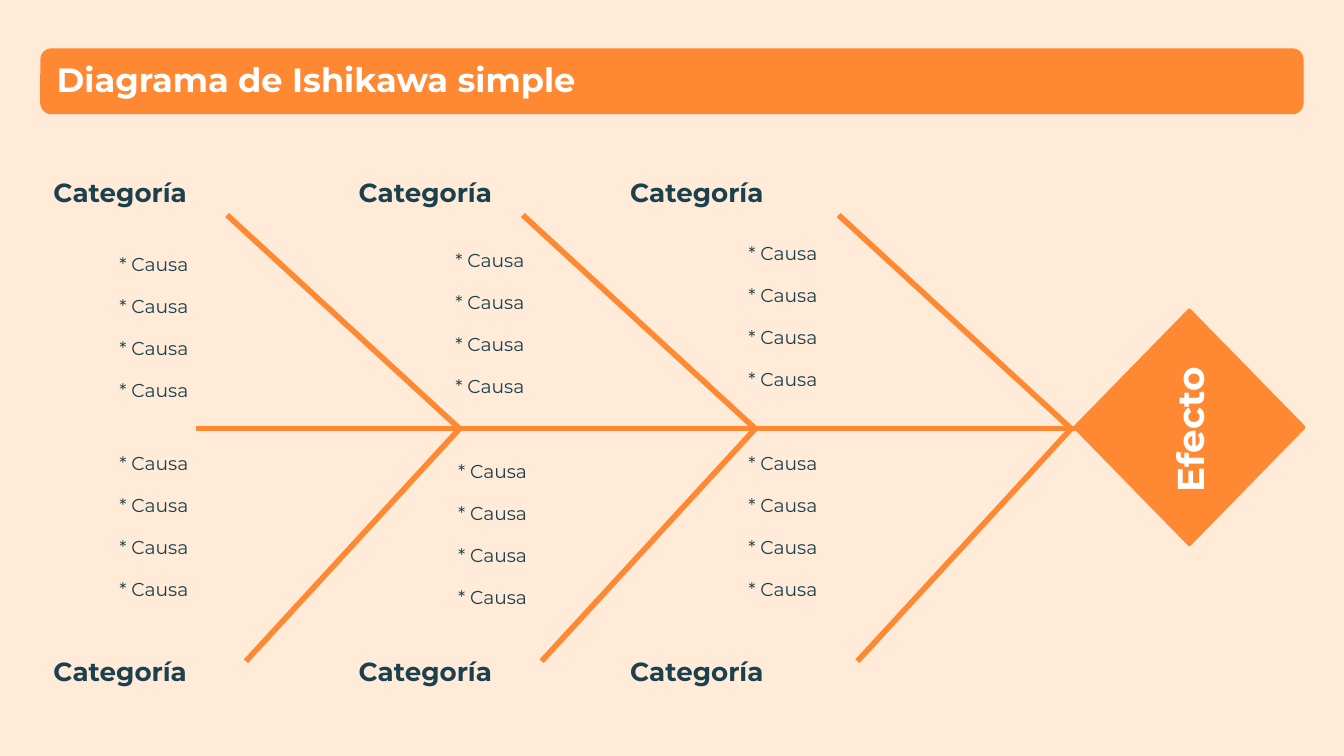
from pptx import Presentation
from pptx.dml.color import RGBColor
from pptx.enum.shapes import MSO_CONNECTOR, MSO_SHAPE
from pptx.enum.text import MSO_ANCHOR, MSO_AUTO_SIZE, PP_ALIGN
from pptx.oxml.ns import qn
from pptx.util import Inches, Pt
from lxml import etree

STRAIGHT = MSO_CONNECTOR.STRAIGHT
DIAMOND = MSO_SHAPE.DIAMOND
ROUNDED = MSO_SHAPE.ROUNDED_RECTANGLE
TOP = MSO_ANCHOR.TOP
MIDDLE = MSO_ANCHOR.MIDDLE
LEFT = PP_ALIGN.LEFT
CENTER = PP_ALIGN.CENTER
GROW = MSO_AUTO_SIZE.SHAPE_TO_FIT_TEXT
FIXED = MSO_AUTO_SIZE.NONE

TITLE = "Diagrama de Ishikawa simple"
EFFECT = "Efecto"
CAUSES = ["* Causa"] * 4
BRANCHES = [
    {
        "joint": 3.42,
        "label_left": 0.3,
        "upper": {"category": "Categoría", "causes": CAUSES, "at": (0.79, 1.83)},
        "lower": {"category": "Categoría", "causes": CAUSES, "at": (0.79, 3.31)},
    },
    {
        "joint": 5.62,
        "label_left": 2.57,
        "upper": {"category": "Categoría", "causes": CAUSES, "at": (3.29, 1.8)},
        "lower": {"category": "Categoría", "causes": CAUSES, "at": (3.31, 3.37)},
    },
    {
        "joint": 7.97,
        "label_left": 4.59,
        "upper": {"category": "Categoría", "causes": CAUSES, "at": (5.47, 1.75)},
        "lower": {"category": "Categoría", "causes": CAUSES, "at": (5.47, 3.31)},
    },
]

SLIDE_WIDTH = Inches(10)
SLIDE_HEIGHT = SLIDE_WIDTH * 9 // 16
SPINE_Y = 3.19
SPINE_ENDS = (1.46, 8.08)
SIDES = {
    "upper": {"run": 1.73, "tip_y": 1.6, "label_top": 1.26},
    "lower": {"run": 1.59, "tip_y": 4.92, "label_top": 4.83},
}
TEXT_WIDTH = 1.34
LABEL_HEIGHT = 0.34
CAUSE_HEIGHT = 0.27
CAUSE_SPAN = 0.94

THEME = {
    "font": "Montserrat",
    "background": RGBColor.from_string("FFEBD8"),
    "accent": RGBColor.from_string("FF8933"),
    "ink": RGBColor.from_string("1B404E"),
    "white": RGBColor.from_string("FFFFFF"),
    "title": 18,
    "effect": 20,
    "category": 14,
    "cause": 10,
    "bone": 3,
    "outline": 2,
}


def write_text(shape, text, size, color, bold=False, align=LEFT, anchor=TOP,
               margin_y=0.05, line_spacing=None, auto_size=FIXED):
    frame = shape.text_frame
    frame.word_wrap = True
    frame.auto_size = auto_size
    frame.vertical_anchor = anchor
    frame.margin_left = frame.margin_right = Inches(0.1)
    frame.margin_top = frame.margin_bottom = Inches(margin_y)
    paragraph = frame.paragraphs[0]
    paragraph.alignment = align
    paragraph.line_spacing = line_spacing
    run = paragraph.add_run()
    run.text = text
    run.font.name = THEME["font"]
    run.font.size = Pt(THEME[size])
    run.font.color.rgb = THEME[color]
    run.font.bold = bold


def add_text(slide, text, left, top, width, height, rotation=0, **text_format):
    shape = slide.shapes.add_textbox(*map(Inches, (left, top, width, height)))
    shape.rotation = rotation
    write_text(shape, text, **text_format)


def add_block(slide, kind, left, top, width, height):
    shape = slide.shapes.add_shape(kind, *map(Inches, (left, top, width, height)))
    shape.shadow.inherit = False
    shape.fill.solid()
    shape.fill.fore_color.rgb = THEME["accent"]
    shape.line.fill.background()
    return shape


def add_bone(slide, start, end):
    connector = slide.shapes.add_connector(STRAIGHT, *map(Inches, start + end))
    connector.line.color.rgb = THEME["accent"]
    connector.line.width = Pt(THEME["bone"])
    etree.SubElement(connector._element.spPr, qn("a:effectLst"))


def add_head(slide):
    head = add_block(slide, DIAMOND, 8, 2.31, 1.7, 1.74)
    head.line.color.rgb = THEME["accent"]
    head.line.width = Pt(THEME["outline"])
    add_bone(slide, (SPINE_ENDS[0], SPINE_Y), (SPINE_ENDS[1], SPINE_Y))
    add_text(slide, EFFECT, 8.2, 3.03, 1.3, 0.34, rotation=270, size="effect",
             color="white", bold=True, align=CENTER, anchor=MIDDLE)


def add_branch(slide, branch):
    for name, side in SIDES.items():
        group = branch[name]
        joint = branch["joint"]
        add_bone(slide, (joint - side["run"], side["tip_y"]), (joint, SPINE_Y))
        add_text(slide, group["category"], branch["label_left"], side["label_top"],
                 TEXT_WIDTH, LABEL_HEIGHT, size="category", color="ink",
                 bold=True, auto_size=GROW)
        left, top = group["at"]
        pitch = CAUSE_SPAN / (len(group["causes"]) - 1)
        for index, cause in enumerate(group["causes"]):
            add_text(slide, cause, left, top + index * pitch, TEXT_WIDTH,
                     CAUSE_HEIGHT, size="cause", color="ink", auto_size=GROW)


def add_title(slide):
    banner = add_block(slide, ROUNDED, 0.3, 0.36, 9.4, 0.49)
    banner.adjustments[0] = 0.17
    write_text(banner, TITLE, size="title", color="white", bold=True,
               anchor=MIDDLE, margin_y=0.1, line_spacing=0.9)


def main():
    presentation = Presentation()
    presentation.slide_width = SLIDE_WIDTH
    presentation.slide_height = SLIDE_HEIGHT
    slide = presentation.slides.add_slide(presentation.slide_layouts[6])
    slide.background.fill.solid()
    slide.background.fill.fore_color.rgb = THEME["background"]
    add_head(slide)
    for branch in BRANCHES:
        add_branch(slide, branch)
    add_title(slide)
    presentation.save("out.pptx")


if __name__ == "__main__":
    main()
